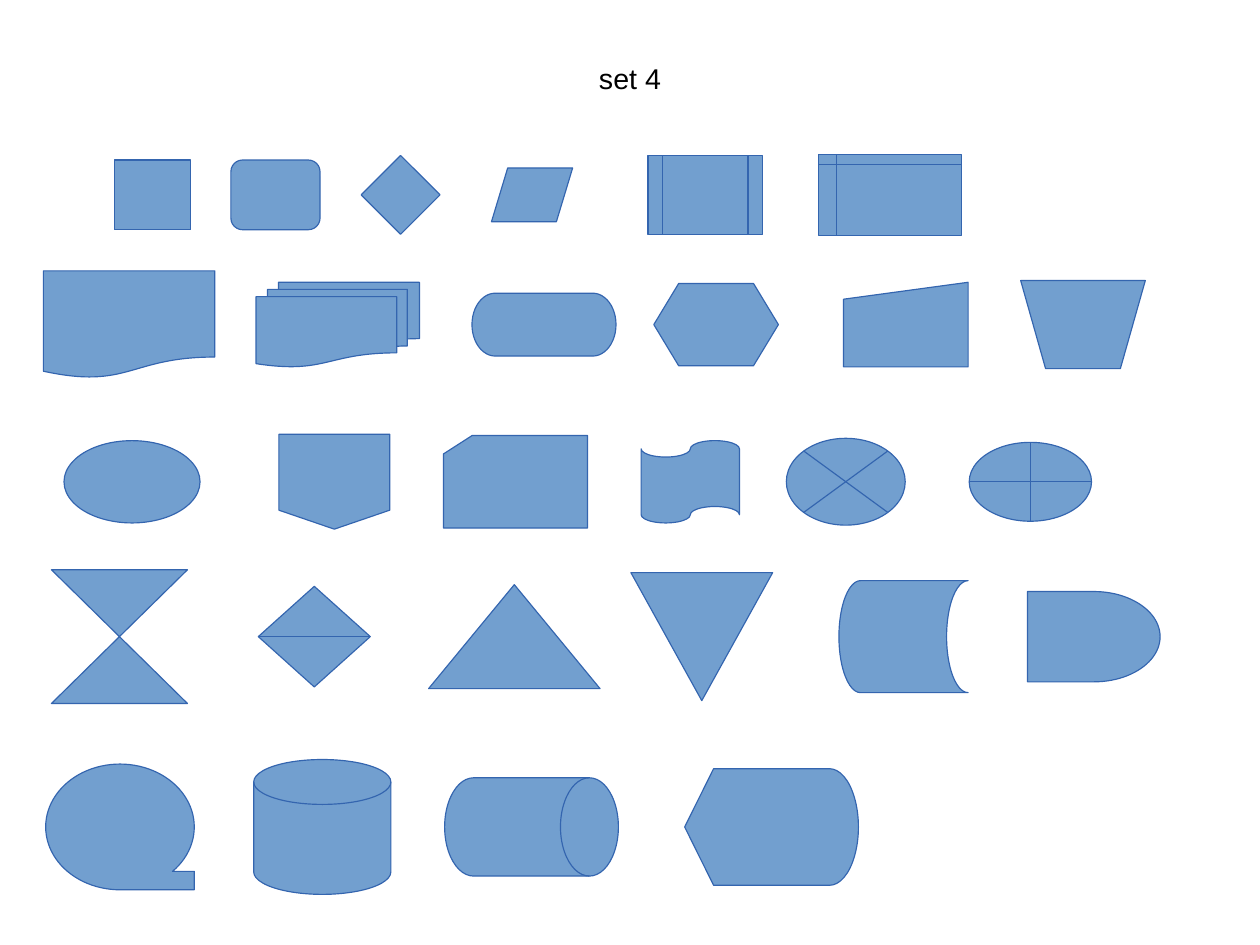
from dataclasses import dataclass

from pptx import Presentation
from pptx.dml.color import RGBColor
from pptx.enum.shapes import MSO_SHAPE as Shape
from pptx.enum.text import MSO_ANCHOR, PP_ALIGN
from pptx.slide import Slide
from pptx.util import Cm, Inches, Length, Pt


@dataclass(frozen=True)
class Theme:
    fill: RGBColor = RGBColor(0x72, 0x9F, 0xCF)
    line: RGBColor = RGBColor(0x34, 0x65, 0xAF)
    text: RGBColor = RGBColor(0, 0, 0)
    font: str = "Arial"
    title_size: Length = Pt(18)
    line_width: Length = Pt(0)  # hairline


@dataclass(frozen=True)
class Symbol:
    """A flowchart symbol; lengths in grid columns and rows."""
    kind: Shape
    left: float
    width: float
    height: float


@dataclass(frozen=True)
class SymbolRow:
    """Symbols that share one horizontal centre line."""
    centre: float
    symbols: list[Symbol]


THEME = Theme()

# Slide size and its grid of square cells
SLIDE_WIDTH, SLIDE_HEIGHT = Cm(28), Cm(21)
CELL = Inches(0.1)

SYMBOL_ROWS = [
    SymbolRow(17.05, [
        Symbol(Shape.FLOWCHART_PROCESS, 10, 6.7, 6.1),
        Symbol(Shape.FLOWCHART_ALTERNATE_PROCESS, 20.2, 7.8, 6.1),
        Symbol(Shape.FLOWCHART_DECISION, 31.6, 6.9, 6.9),
        Symbol(Shape.FLOWCHART_DATA, 43, 7.1, 4.7),
        Symbol(Shape.FLOWCHART_PREDEFINED_PROCESS, 56.7, 10, 6.9),
        Symbol(Shape.FLOWCHART_INTERNAL_STORAGE, 71.6, 12.5, 7.1),
    ]),
    SymbolRow(28.4, [
        Symbol(Shape.FLOWCHART_DOCUMENT, 3.8, 15, 9.4),
        Symbol(Shape.FLOWCHART_MULTIDOCUMENT, 22.4, 14.3, 7.4),
        Symbol(Shape.FLOWCHART_TERMINATOR, 41.3, 12.6, 5.5),
        Symbol(Shape.FLOWCHART_PREPARATION, 57.2, 10.9, 7.2),
        Symbol(Shape.FLOWCHART_MANUAL_INPUT, 73.8, 10.9, 7.4),
        Symbol(Shape.FLOWCHART_MANUAL_OPERATION, 89.3, 10.9, 7.7),
    ]),
    SymbolRow(42.15, [
        Symbol(Shape.FLOWCHART_CONNECTOR, 5.6, 11.9, 7.2),
        Symbol(Shape.FLOWCHART_OFFPAGE_CONNECTOR, 24.4, 9.7, 8.3),
        Symbol(Shape.FLOWCHART_CARD, 38.8, 12.6, 8.1),
        Symbol(Shape.FLOWCHART_PUNCHED_TAPE, 56.1, 8.6, 7.2),
        Symbol(Shape.FLOWCHART_SUMMING_JUNCTION, 68.8, 10.4, 7.6),
        Symbol(Shape.FLOWCHART_OR, 84.8, 10.7, 6.9),
    ]),
    SymbolRow(55.7, [
        Symbol(Shape.FLOWCHART_COLLATE, 4.5, 11.9, 11.7),
        Symbol(Shape.FLOWCHART_SORT, 22.6, 9.8, 8.8),
        Symbol(Shape.FLOWCHART_EXTRACT, 37.5, 15, 9.1),
        Symbol(Shape.FLOWCHART_MERGE, 55.2, 12.4, 11.2),
        Symbol(Shape.FLOWCHART_STORED_DATA, 73.4, 11.3, 9.8),
        Symbol(Shape.FLOWCHART_DELAY, 89.9, 11.6, 7.9),
    ]),
    SymbolRow(72.35, [
        Symbol(Shape.FLOWCHART_SEQUENTIAL_ACCESS_STORAGE, 4, 13, 11),
        Symbol(Shape.FLOWCHART_MAGNETIC_DISK, 22.2, 12, 11.8),
        Symbol(Shape.FLOWCHART_DIRECT_ACCESS_STORAGE, 38.9, 15.2, 8.6),
        Symbol(Shape.FLOWCHART_DISPLAY, 59.9, 15.2, 10.2),
    ]),
]


def cells(count: float) -> Length:
    return Length(round(count * CELL))


def draw_title(s: Slide, text: str) -> None:
    margin, top, height = cells(5.5), cells(3.3), cells(7.1)
    sp = s.shapes.add_textbox(margin, top, SLIDE_WIDTH - 2 * margin, height)
    tf = sp.text_frame
    tf.word_wrap = True
    tf.vertical_anchor = MSO_ANCHOR.MIDDLE
    tf.margin_left = tf.margin_right = tf.margin_top = tf.margin_bottom = 0
    p = tf.paragraphs[0]
    p.alignment = PP_ALIGN.CENTER
    r = p.add_run()
    r.text = text
    r.font.name = THEME.font
    r.font.size = THEME.title_size
    r.font.color.rgb = THEME.text


def draw_symbol(s: Slide, symbol: Symbol, centre: float) -> None:
    sp = s.shapes.add_shape(
        symbol.kind, cells(symbol.left), cells(centre - symbol.height / 2),
        cells(symbol.width), cells(symbol.height))
    sp.shadow.inherit = False
    sp.fill.solid()
    sp.fill.fore_color.rgb = THEME.fill
    sp.line.color.rgb = THEME.line
    sp.line.width = THEME.line_width


def main() -> None:
    prs = Presentation()
    prs.slide_width, prs.slide_height = SLIDE_WIDTH, SLIDE_HEIGHT
    s = prs.slides.add_slide(prs.slide_layouts[6])

    # Title
    draw_title(s, "set 4")

    # Flowchart symbols, row by row
    for row in SYMBOL_ROWS:
        for symbol in row.symbols:
            draw_symbol(s, symbol, row.centre)

    prs.save("out.pptx")


if __name__ == "__main__":
    main()
